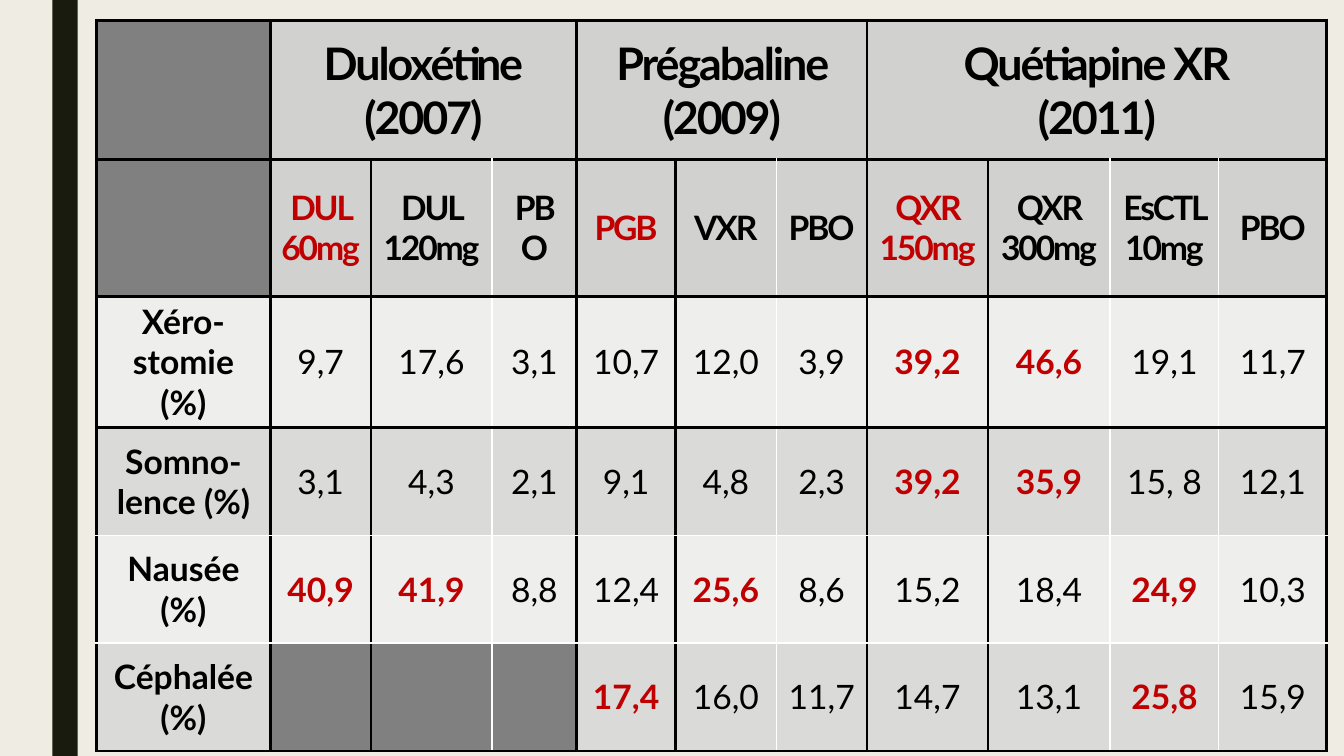
from dataclasses import dataclass

from lxml import etree
from pptx import Presentation
from pptx.dml.color import RGBColor
from pptx.enum.shapes import MSO_SHAPE
from pptx.enum.text import MSO_ANCHOR, PP_ALIGN
from pptx.oxml.ns import qn
from pptx.util import Inches, Pt

# Column groups: heading, number of treatment arms
STUDIES = [("Duloxétine\n(2007)", 3), ("Prégabaline (2009)", 3), ("Quétiapine XR\n(2011)", 4)]
# A leading * marks a highlighted entry, None an unavailable one
ARMS = [None, "*DUL 60mg", "DUL 120mg", "PBO", "*PGB", "VXR", "PBO",
        "*QXR 150mg", "QXR 300mg", "EsCTL 10mg", "PBO"]
SIDE_EFFECTS = [
    ["Xéro-stomie (%)", "9,7", "17,6", "3,1", "10,7", "12,0", "3,9",
     "*39,2", "*46,6", "19,1", "11,7"],
    ["Somno-lence (%)", "3,1", "4,3", "2,1", "9,1", "4,8", "2,3",
     "*39,2", "*35,9", "15, 8", "12,1"],
    ["Nausée (%)", "*40,9", "*41,9", "8,8", "12,4", "*25,6", "8,6",
     "15,2", "18,4", "*24,9", "10,3"],
    ["Céphalée (%)", None, None, None, "*17,4", "16,0", "11,7",
     "14,7", "13,1", "*25,8", "15,9"],
]
COLUMN_WIDTHS = [1.72, 1, 1.2, 0.84, 0.98, 1, 0.9, 1.2, 1.21, 1.08, 1.07]
ROW_HEIGHTS = [1.38, 1.36] + [1.07] * len(SIDE_EFFECTS)
TABLE_LEFT, TABLE_TOP = 0.96, 0.2
# Grid lines drawn heavy, counted from the left and from the top
HEAVY_COLUMN_LINES = {0, 1, 2, 4, 5, 7, 8, 11}
HEAVY_ROW_LINES = {0, 1, 2, 3, 6}


@dataclass(frozen=True)
class Theme:
    font: str = "Lato"
    study_size: int = 32
    body_size: int = 24
    header_spacing: int = -150
    background: str = "EFEDE3"
    bar: str = "191B0E"
    text: str = "000000"
    highlight: str = "C00000"
    unavailable: str = "808080"
    header: str = "D1D1CF"
    bands: tuple = ("EEEEED", "DADBD9")
    heavy_line: tuple = ("000000", 2.25)
    light_line: tuple = ("FFFFFF", 1)


THEME = Theme()


def paint(fill, color):
    fill.solid()
    fill.fore_color.rgb = RGBColor.from_string(color)


def set_borders(cell, row, column, right):
    """Draw the four sides; right is the grid line that ends the cell."""
    sides = [
        ("a:lnL", column in HEAVY_COLUMN_LINES),
        ("a:lnR", right in HEAVY_COLUMN_LINES),
        ("a:lnT", row in HEAVY_ROW_LINES),
        ("a:lnB", row + 1 in HEAVY_ROW_LINES),
    ]
    properties = cell._tc.get_or_add_tcPr()
    for position, (tag, heavy) in enumerate(sides):
        color, width = THEME.heavy_line if heavy else THEME.light_line
        line = etree.Element(qn(tag), w=str(int(Pt(width))))
        solid = etree.SubElement(line, qn("a:solidFill"))
        etree.SubElement(solid, qn("a:srgbClr"), val=color)
        properties.insert(position, line)


def write(cell, entry, size, bold, spacing=0):
    highlighted = entry.startswith("*")
    cell.text_frame.text = entry.lstrip("*")
    cell.vertical_anchor = MSO_ANCHOR.MIDDLE
    for paragraph in cell.text_frame.paragraphs:
        paragraph.alignment = PP_ALIGN.CENTER
        for run in paragraph.runs:
            run.font.name = THEME.font
            run.font.size = Pt(size)
            run.font.bold = bold or highlighted
            color = THEME.highlight if highlighted else THEME.text
            run.font.color.rgb = RGBColor.from_string(color)
            if spacing:
                run.font._element.set("spc", str(spacing))


def add_side_bar(slide, height):
    bar = slide.shapes.add_shape(MSO_SHAPE.RECTANGLE, Inches(0.52), 0, Inches(0.25), height)
    bar.shadow.inherit = False
    paint(bar.fill, THEME.bar)
    bar.line.fill.background()


def fill_study_row(table):
    paint(table.cell(0, 0).fill, THEME.unavailable)
    set_borders(table.cell(0, 0), 0, 0, 1)
    first = 1
    for study, arm_count in STUDIES:
        end = first + arm_count
        heading = table.cell(0, first)
        heading.merge(table.cell(0, end - 1))
        write(heading, study, THEME.study_size, True, THEME.header_spacing)
        for column in range(first, end):
            paint(table.cell(0, column).fill, THEME.header)
            set_borders(table.cell(0, column), 0, first, end)
        first = end


def fill_body(table):
    for row, entries in enumerate([ARMS] + SIDE_EFFECTS, start=1):
        is_header = row == 1
        color = THEME.header if is_header else THEME.bands[row % 2]
        spacing = THEME.header_spacing if is_header else 0
        for column, entry in enumerate(entries):
            cell = table.cell(row, column)
            paint(cell.fill, color if entry else THEME.unavailable)
            set_borders(cell, row, column, column + 1)
            if entry:
                write(cell, entry, THEME.body_size, is_header or column == 0, spacing)


def add_side_effect_table(slide):
    table = slide.shapes.add_table(
        len(ROW_HEIGHTS), len(COLUMN_WIDTHS), Inches(TABLE_LEFT), Inches(TABLE_TOP),
        Inches(sum(COLUMN_WIDTHS)), Inches(sum(ROW_HEIGHTS))).table
    table.horz_banding = False
    for column, width in zip(table.columns, COLUMN_WIDTHS):
        column.width = Inches(width)
    for row, height in zip(table.rows, ROW_HEIGHTS):
        row.height = Inches(height)
    fill_study_row(table)
    fill_body(table)


def main():
    presentation = Presentation()
    presentation.slide_width = Inches(13.33)
    presentation.slide_height = Inches(7.5)
    slide = presentation.slides.add_slide(presentation.slide_layouts[6])
    paint(slide.background.fill, THEME.background)
    add_side_bar(slide, presentation.slide_height)
    add_side_effect_table(slide)
    presentation.save("out.pptx")


if __name__ == "__main__":
    main()
